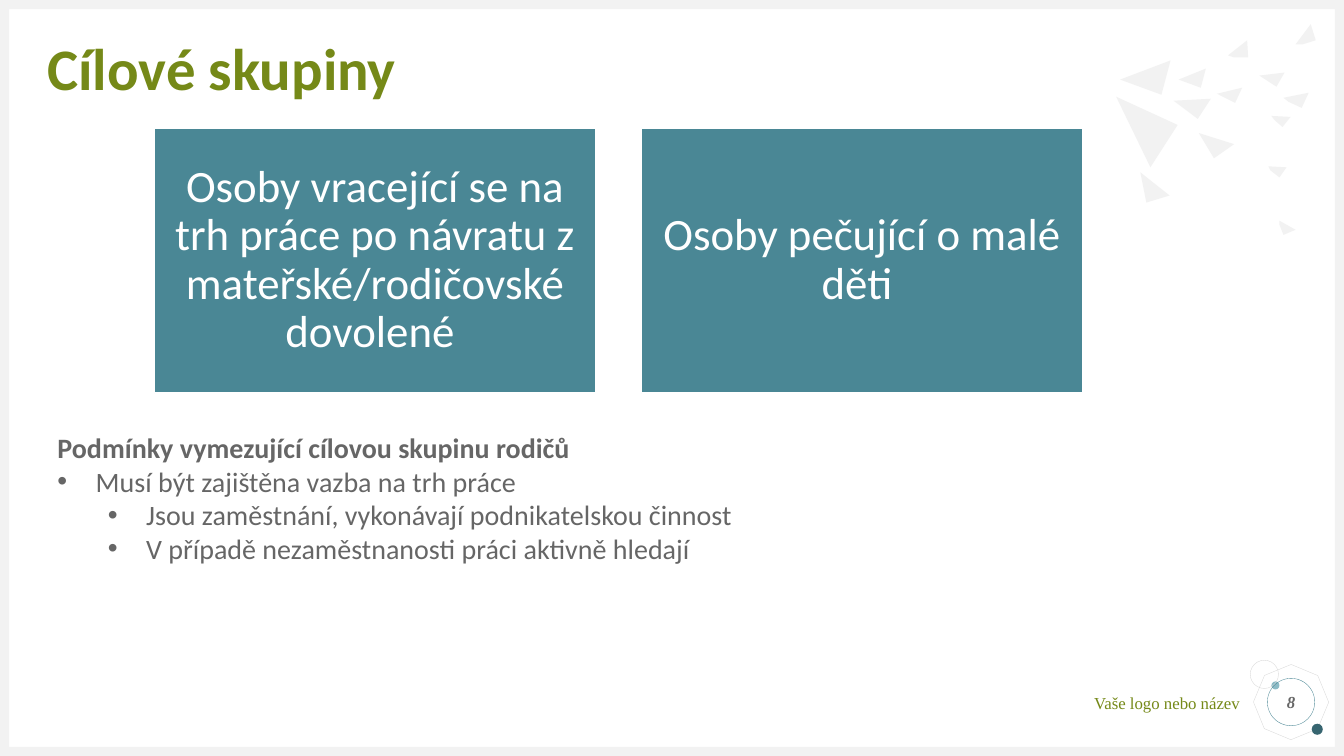
from lxml import etree
from pptx import Presentation
from pptx import util as u
from pptx.dml.color import RGBColor
from pptx.enum import shapes, text
from pptx.oxml.ns import qn

WIDE, HIGH, EDGE = 13.33, 7.5, 0.09
GREEN, TEAL, GREY, PALE, RING = "758918", "4A8795", "666666", "F2F2F2", "D9D9D9"
SANS, SERIF = "Calibri", "Times New Roman"
KIND, SIDE, MID = shapes.MSO_SHAPE, text.PP_ALIGN, text.MSO_ANCHOR.MIDDLE

SHARDS = [
    [(11.61, 0.6), (11.52, 0.94), (11.11, 0.79)],
    [(12.01, 0.98), (11.88, 1.18), (11.64, 1)],
    [(11.96, 0.68), (11.91, 0.87), (11.69, 0.79)],
    [(12.32, 0.87), (12.25, 1.02), (12.07, 0.93)],
    [(12.37, 0.4), (12.38, 0.57), (12.24, 0.57), (12.18, 0.55)],
    [(12.8, 1.16), (12.72, 1.26), (12.64, 1.19), (12.61, 1.15)],
    [(13, 0.24), (13.05, 0.4), (12.92, 0.44), (12.85, 0.44)],
    [(12.74, 0.72), (12.66, 0.86), (12.49, 0.75)],
    [(12.98, 0.92), (12.91, 1.07), (12.78, 1.01), (12.73, 0.97)],
    [(11.68, 1.24), (11.41, 1.66), (11.07, 0.96)],
    [(12.24, 1.43), (12.04, 1.57), (11.89, 1.32)],
    [(12.76, 1.66), (12.69, 1.76), (12.6, 1.69), (12.58, 1.65)],
    [(11.6, 1.94), (11.37, 2.01), (11.31, 1.71)],
    [(12.85, 2.28), (12.73, 2.33), (12.69, 2.23), (12.69, 2.19)],
]
GROUPS = [
    "Osoby vracející se na trh práce po návratu z mateřské/rodičovské dovolené ",
    "Osoby pečující o malé děti ",
]
TERMS = [
    (0, "Musí být zajištěna vazba na trh práce"),
    (1, "Jsou zaměstnání, vykonávají podnikatelskou činnost"),
    (1, "V případě nezaměstnanosti práci aktivně hledají"),
]


def tint(code):
    """Turn a hex string into a colour."""
    return RGBColor.from_string(code)


class Page:
    """Hold the current slide and draw its elements in one style."""

    def __init__(self, deck):
        """Add a title-only slide."""
        self.slide = deck.slides.add_slide(deck.slide_layouts[5])
        self.items = self.slide.shapes

    def paint(self, item, fill=None, line=None, width=0.25):
        """Set the fill and outline of a shape."""
        item.shadow.inherit = False
        if fill:
            item.fill.solid()
            item.fill.fore_color.rgb = tint(fill)
        else:
            item.fill.background()
        if line:
            item.line.color.rgb = tint(line)
            item.line.width = u.Pt(width)
        else:
            item.line.fill.background()

    def shape(self, kind, box, turn=0, **look):
        """Draw a preset shape."""
        item = self.items.add_shape(kind, *map(u.Inches, box))
        item.rotation = turn
        self.paint(item, **look)
        return item

    def shard(self, points):
        """Draw a pale closed outline."""
        start, *rest = [(u.Inches(x), u.Inches(y)) for x, y in points]
        form = self.items.build_freeform(*start)
        form.add_line_segments(rest, close=True)
        self.paint(form.convert_to_shape(), fill=PALE)

    def frame(self, item, inset=0, anchor=text.MSO_ANCHOR.TOP):
        """Set the margins and anchor of a text frame."""
        body = item.text_frame
        body.word_wrap = True
        body.auto_size = text.MSO_AUTO_SIZE.NONE
        body.vertical_anchor = anchor
        body.margin_left = body.margin_right = u.Inches(inset)
        body.margin_top = body.margin_bottom = u.Inches(inset)
        return body

    def phrase(self, para, words, size, color, face=SANS, side=SIDE.LEFT,
               lead=1, bold=False, slant=False):
        """Fill and format a paragraph."""
        para.text = words
        para.alignment = side
        para.line_spacing = lead
        para.space_before = u.Pt(0)
        font = para.font
        font.name, font.size, font.bold, font.italic = face, u.Pt(size), bold, slant
        font.color.rgb = tint(color)

    def label(self, item, words, size, color, inset=0, anchor=MID, **style):
        """Put one paragraph into a shape."""
        body = self.frame(item, inset, anchor)
        self.phrase(body.paragraphs[0], words, size, color, **style)

    def title(self, box, words):
        """Place and format the title."""
        item = self.items.title
        item.left, item.top, item.width, item.height = map(u.Inches, box)
        self.label(item, words, 42, GREEN, lead=0.9, bold=True)

    def box(self, box):
        """Add a text box."""
        return self.items.add_textbox(*map(u.Inches, box))

    def list(self, box, head, rows):
        """Set a bold heading above bulleted rows."""
        body = self.frame(self.box(box))
        self.phrase(body.paragraphs[0], head, 20, GREY, bold=True)
        for level, words in rows:
            para = body.add_paragraph()
            para.level = level
            props = para._p.get_or_add_pPr()
            props.set("marL", str(u.Inches(0.38 + 0.5 * level)))
            props.set("indent", str(u.Inches(-0.38)))
            etree.SubElement(props, qn("a:buFont")).set("typeface", "Arial")
            etree.SubElement(props, qn("a:buChar")).set("char", "•")
            self.phrase(para, words, 20, GREY)


def main():
    """Build the slide and save it."""
    deck = Presentation()
    deck.slide_width, deck.slide_height = u.Inches(WIDE), u.Inches(HIGH)
    page = Page(deck)

    page.shape(KIND.OCTAGON, (12.46, 6.62, 0.69, 0.69), 22.7, line=RING)
    page.shape(KIND.OVAL, (12.61, 6.76, 0.08, 0.08), fill="8CBBC6")
    page.shape(KIND.OVAL, (13.01, 7.18, 0.11, 0.11), fill="376570")
    page.label(page.box((9.55, 6.87, 2.75, 0.2)), "Vaše logo nebo název", 12,
               GREEN, anchor=text.MSO_ANCHOR.TOP, face=SERIF, side=SIDE.RIGHT)
    page.shape(KIND.OVAL, (12.4, 6.55, 0.28, 0.28), line=RING)

    for rim in [(0, HIGH - EDGE, WIDE, EDGE), (0, 0, WIDE, EDGE),
                (0, 0, EDGE, HIGH), (WIDE - EDGE, 0, EDGE, HIGH)]:
        page.shape(KIND.RECTANGLE, rim, fill=PALE)
    for points in SHARDS:
        page.shard(points)

    page.title((0.47, 0.47, 12.4, 0.47), "Cílové skupiny")
    badge = page.shape(KIND.OVAL, (12.57, 6.73, 0.47, 0.47), line=TEAL)
    page.label(badge, "8", 12, GREY, face=SERIF, side=SIDE.CENTER,
               bold=True, slant=True)

    for i, words in enumerate(GROUPS):
        card = page.shape(KIND.RECTANGLE, (1.53 + 4.83 * i, 1.27, 4.38, 2.63),
                          fill=TEAL, line="FFFFFF", width=1)
        page.label(card, words, 32, "FFFFFF", inset=0.13, side=SIDE.CENTER,
                   lead=0.9)

    page.list((0.57, 4.27, 11.63, 2.05),
              "Podmínky vymezující cílovou skupinu rodičů", TERMS)
    deck.save("out.pptx")


if __name__ == "__main__":
    main()
